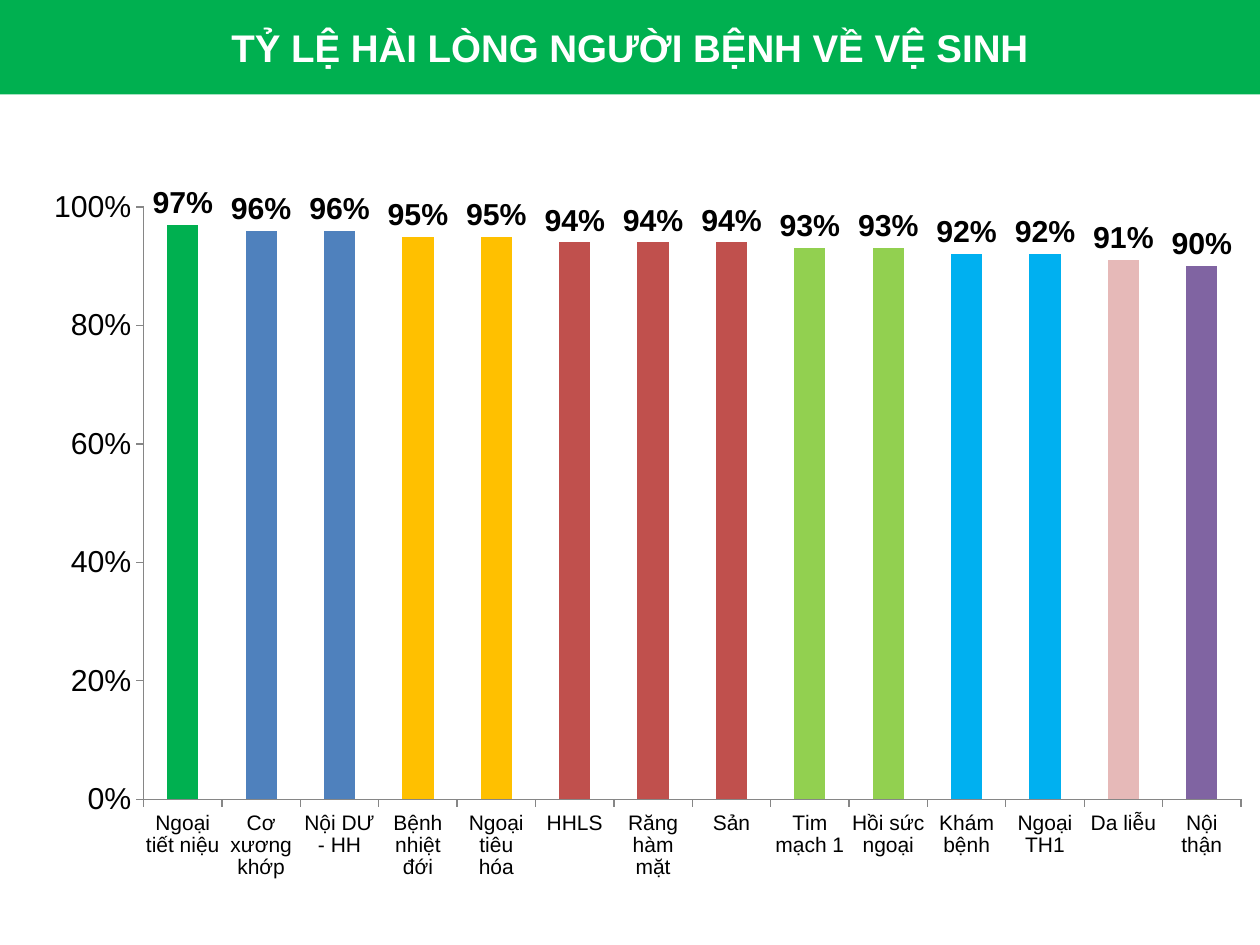
import lxml.etree
import pptx
import pptx.chart.data
import pptx.dml.color
import pptx.enum.chart
import pptx.enum.text
import pptx.oxml.ns
import pptx.util

WIDTH = pptx.util.Inches(10)
HEIGHT = pptx.util.Inches(7.5)
FONT = "Arial"
COLORS = {"banner": "00B050", "title": "FFFFFF", "text": "000000", "axis": "868686"}
BAR_COLORS = {  # departments with the same rate share a colour
    0.97: "00B050",
    0.96: "4F81BD",
    0.95: "FFC000",
    0.94: "C0504D",
    0.93: "92D050",
    0.92: "00B0F0",
    0.91: "E6B9B8",
    0.90: "8064A2",
}
SATISFACTION = {
    "Ngoại tiết niệu": 0.97,
    "Cơ xương khớp": 0.96,
    "Nội DƯ - HH": 0.96,
    "Bệnh nhiệt đới": 0.95,
    "Ngoại tiêu hóa": 0.95,
    "HHLS": 0.94,
    "Răng hàm mặt": 0.94,
    "Sản": 0.94,
    "Tim mạch 1": 0.93,
    "Hồi sức ngoại": 0.93,
    "Khám bệnh": 0.92,
    "Ngoại TH1": 0.92,
    "Da liễu": 0.91,
    "Nội thận": 0.90,
}


def rgb(name):
    return pptx.dml.color.RGBColor.from_string(COLORS.get(name, name))


def set_font(font, size, color="text", bold=False):
    font.name = FONT
    font.size = pptx.util.Pt(size)
    font.bold = bold
    font.color.rgb = rgb(color)


def add_banner_title(slide, text):
    title = slide.shapes.title
    title.left, title.top = 0, 0
    title.width, title.height = WIDTH, int(HEIGHT * 0.1)
    title.fill.solid()
    title.fill.fore_color.rgb = rgb("banner")
    frame = title.text_frame
    frame.text = text
    frame.vertical_anchor = pptx.enum.text.MSO_ANCHOR.MIDDLE
    heading = frame.paragraphs[0]
    heading.alignment = pptx.enum.text.PP_ALIGN.CENTER
    set_font(heading.font, 22, "title", bold=True)


def format_axis(axis, size):
    axis.has_major_gridlines = False
    axis.major_tick_mark = pptx.enum.chart.XL_TICK_MARK.OUTSIDE
    axis.minor_tick_mark = pptx.enum.chart.XL_TICK_MARK.NONE
    axis.format.line.color.rgb = rgb("axis")
    axis.format.line.width = pptx.util.Pt(0.75)
    set_font(axis.tick_labels.font, size)


def place_plot(chart, **shares):
    """Fix the inner plot area at x, y, w, h given as shares of the chart."""
    plot_area = chart.plots[0]._element.getparent()
    tag = pptx.oxml.ns.qn
    for old in plot_area.findall(tag("c:layout")):
        plot_area.remove(old)
    layout = lxml.etree.Element(tag("c:layout"))
    manual = lxml.etree.SubElement(layout, tag("c:manualLayout"))
    settings = {"layoutTarget": "inner", "xMode": "edge", "yMode": "edge", **shares}
    for key, value in settings.items():
        lxml.etree.SubElement(manual, tag(f"c:{key}"), val=str(value))
    plot_area.insert(0, layout)


def add_rate_chart(slide, rates):
    data = pptx.chart.data.CategoryChartData(number_format="0%")
    data.categories = list(rates)
    data.add_series("Series 1", list(rates.values()))
    chart = slide.shapes.add_chart(
        pptx.enum.chart.XL_CHART_TYPE.COLUMN_CLUSTERED,
        0, pptx.util.Inches(1.23), WIDTH, pptx.util.Inches(5.9), data,
    ).chart
    chart.has_legend = False
    chart.has_title = False
    set_font(chart.font, 17.3)

    format_axis(chart.category_axis, 12)
    rate_axis = chart.value_axis
    format_axis(rate_axis, 17.3)
    rate_axis.minimum_scale, rate_axis.maximum_scale = 0, 1
    rate_axis.major_unit = 0.2
    rate_axis.tick_labels.number_format = "0%"
    rate_axis.tick_labels.number_format_is_linked = False

    columns = chart.plots[0]
    columns.gap_width = 150
    columns.vary_by_categories = False
    series = columns.series[0]
    series.format.fill.solid()
    series.format.fill.fore_color.rgb = rgb(BAR_COLORS[0.96])
    for index, rate in enumerate(rates.values()):
        fill = series.points[index].format.fill
        fill.solid()
        fill.fore_color.rgb = rgb(BAR_COLORS[rate])

    labels = series.data_labels
    labels.show_value = True
    labels.number_format = "0%"
    labels.number_format_is_linked = False
    labels.position = pptx.enum.chart.XL_LABEL_POSITION.OUTSIDE_END
    set_font(labels.font, 17.3, bold=True)
    place_plot(chart, x=0.114, y=0.07, w=0.871, h=0.797)


def main():
    deck = pptx.Presentation()
    deck.slide_width, deck.slide_height = WIDTH, HEIGHT
    slide = deck.slides.add_slide(deck.slide_layouts.get_by_name("Title Only"))
    add_banner_title(slide, "TỶ LỆ HÀI LÒNG NGƯỜI BỆNH VỀ VỆ SINH")
    add_rate_chart(slide, SATISFACTION)
    deck.save("out.pptx")


if __name__ == "__main__":
    main()
